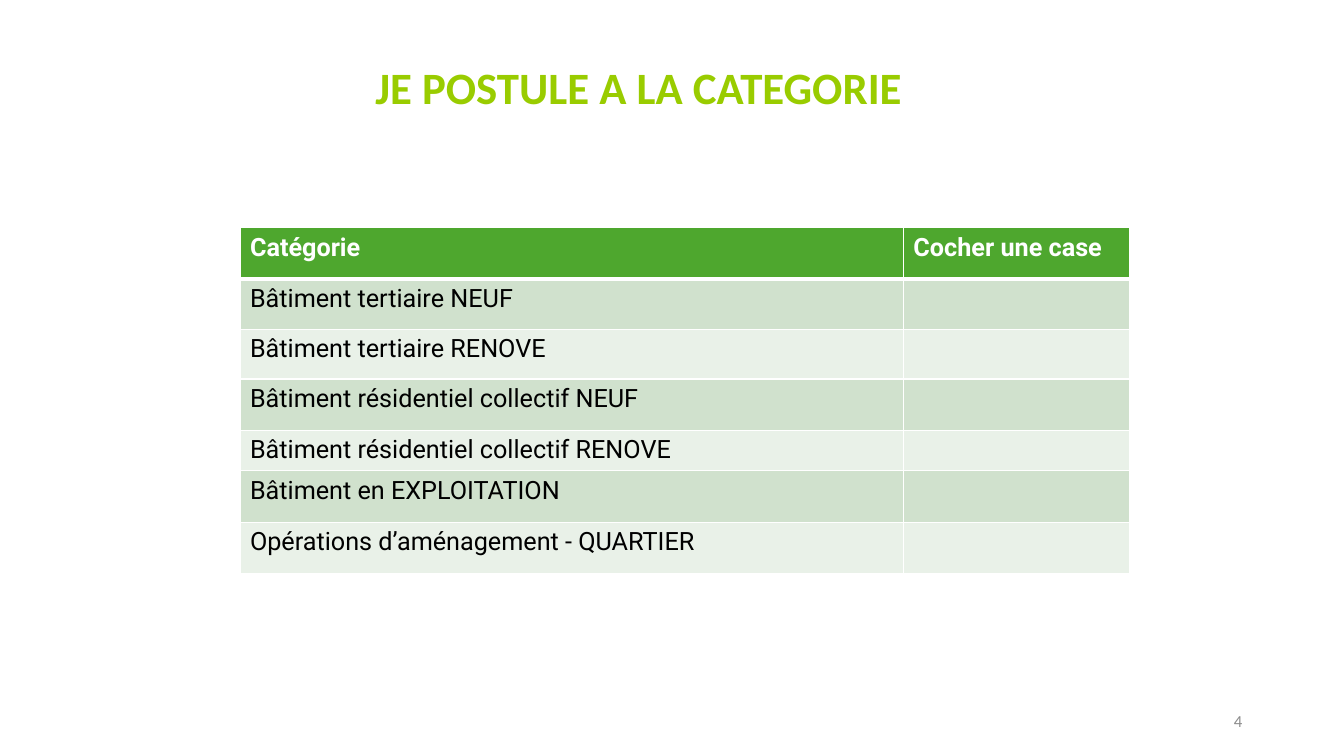
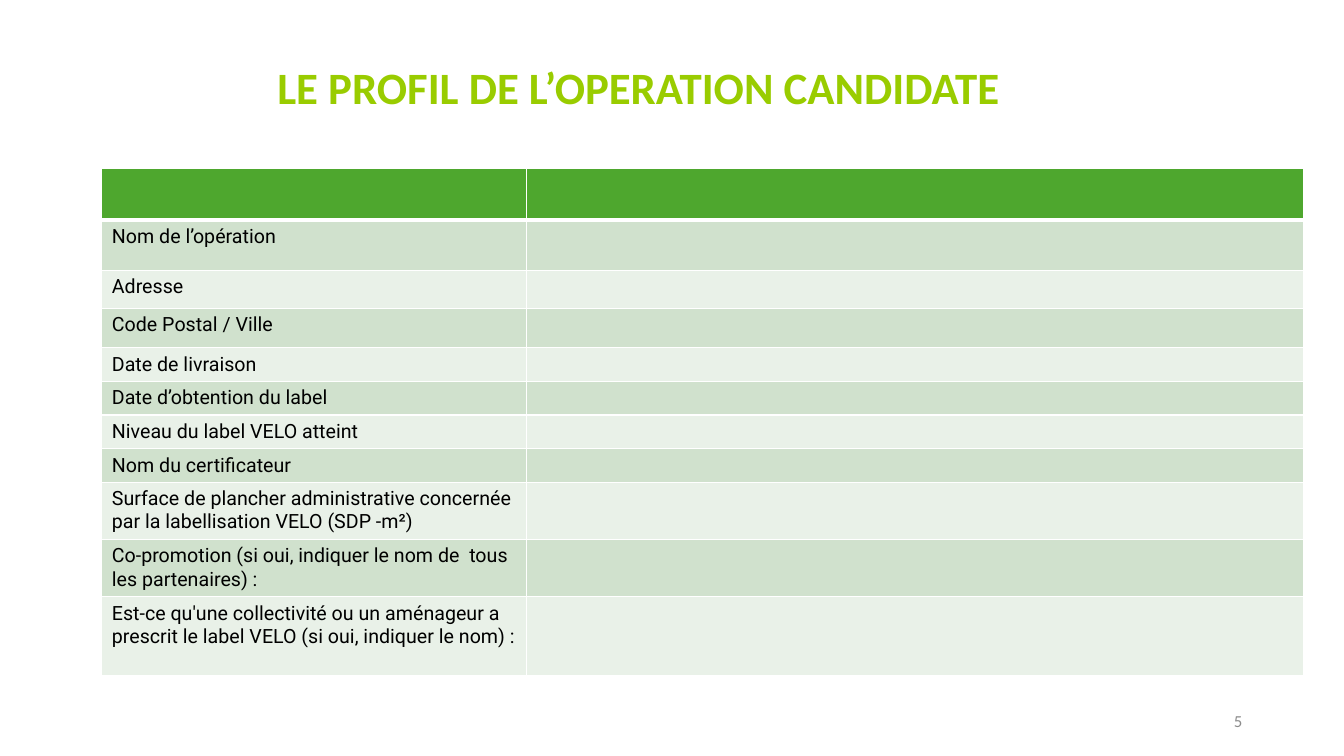
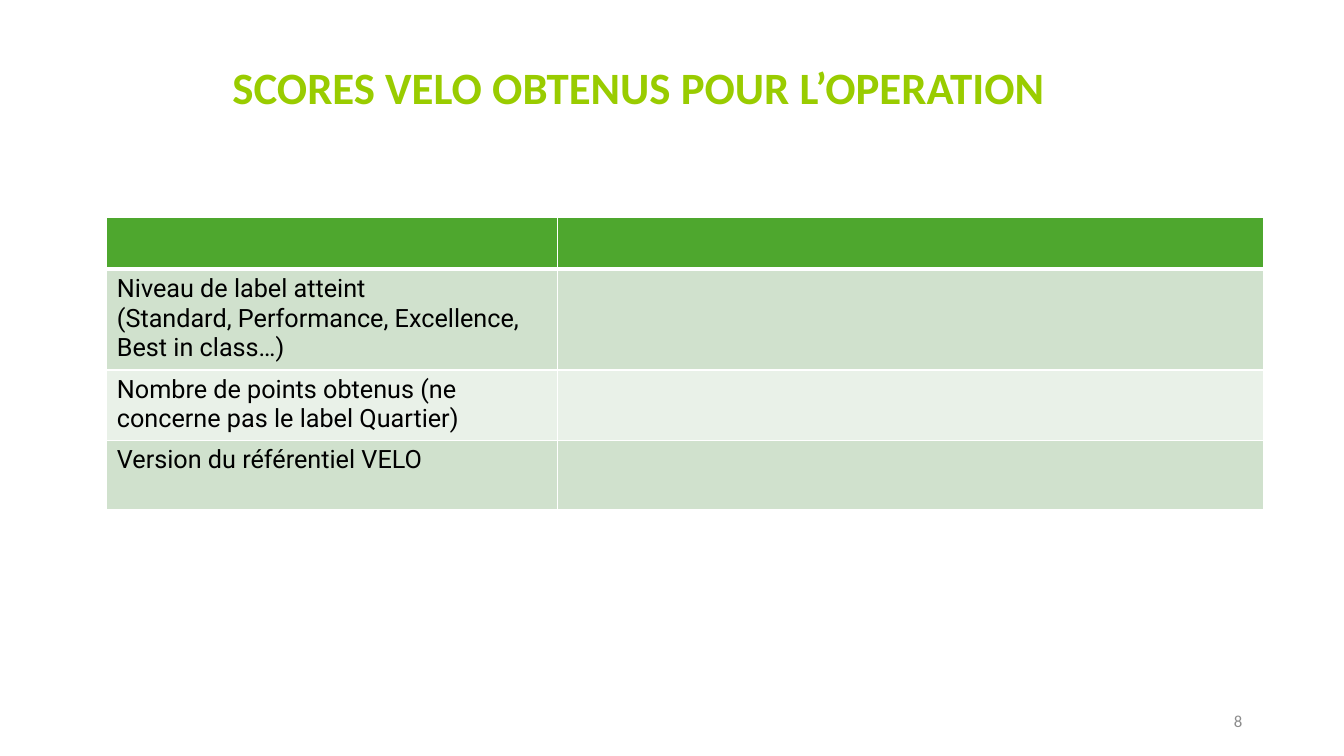
"""Build three application form slides, each with a title, a banded table and a page number."""
import pptx
import pptx.dml.color
import pptx.enum.text
import pptx.oxml
import pptx.oxml.ns
import pptx.util

Inches = pptx.util.Inches
Pt = pptx.util.Pt
RGBColor = pptx.dml.color.RGBColor
PP_ALIGN = pptx.enum.text.PP_ALIGN
MSO_ANCHOR = pptx.enum.text.MSO_ANCHOR

LIME = RGBColor(0x99, 0xCC, 0x00)
GREEN = RGBColor(0x4E, 0xA7, 0x2E)
BAND_DARK = RGBColor(0xD0, 0xE1, 0xCD)
BAND_LIGHT = RGBColor(0xE9, 0xF1, 0xE8)
GRAY = RGBColor(0x8C, 0x8C, 0x8C)
BLACK = RGBColor(0x00, 0x00, 0x00)
WHITE = RGBColor(0xFF, 0xFF, 0xFF)
TITLE_FONT = "Calibri"
TABLE_FONT = "Roboto"

PAGES = [
    {
        "number": "4",
        "title": "JE POSTULE A LA CATEGORIE",
        "left": 2.38, "top": 2.26, "size": 18,
        "columns": [6.58, 2.24],
        "header": ["Catégorie", "Cocher une case"],
        "header_height": 0.51,
        "rows": [
            ("Bâtiment tertiaire NEUF", 0.5),
            ("Bâtiment tertiaire RENOVE", 0.49),
            ("Bâtiment résidentiel collectif NEUF", 0.51),
            ("Bâtiment résidentiel collectif RENOVE", 0.4),
            ("Bâtiment en EXPLOITATION", 0.51),
            ("Opérations d’aménagement - QUARTIER", 0.51),
        ],
    },
    {
        "number": "5",
        "title": "LE PROFIL DE L’OPERATION CANDIDATE",
        "left": 1.01, "top": 1.67, "size": 14,
        "columns": [4.21, 7.71],
        "header": ["", ""],
        "header_height": 0.51,
        "rows": [
            ("Nom de l’opération", 0.5),
            ("Adresse", 0.38),
            ("Code Postal / Ville", 0.39),
            ("Date de livraison", 0.33),
            ("Date d’obtention du label", 0.33),
            ("Niveau du label VELO atteint", 0.33),
            ("Nom du certificateur", 0.33),
            ("Surface de plancher administrative concernée par la labellisation VELO (SDP -m²)", 0.55),
            ("Co-promotion (si oui, indiquer le nom de  tous les partenaires) :", 0.55),
            ("Est-ce qu'une collectivité ou un aménageur a prescrit le label VELO "
             "(si oui, indiquer le nom) :", 0.78),
        ],
    },
    {
        "number": "8",
        "title": "SCORES VELO OBTENUS POUR L’OPERATION",
        "left": 1.06, "top": 2.16, "size": 18,
        "columns": [4.47, 7],
        "header": ["", ""],
        "header_height": 0.51,
        "rows": [
            ("Niveau de label atteint\n(Standard, Performance, Excellence, Best in class…)", 0.97),
            ("Nombre de points obtenus (ne concerne pas le label Quartier)", 0.68),
            ("Version du référentiel VELO", 0.69),
        ],
    },
]


def add_text(paragraph, text, font_name, size, color, bold=False):
    run = paragraph.add_run()
    run.text = text
    run.font.name = font_name
    run.font.size = Pt(size)
    run.font.color.rgb = color
    run.font.bold = bold


def add_borders(cell, widths):
    properties = cell._tc.get_or_add_tcPr()
    for side, width in widths.items():
        properties.append(pptx.oxml.parse_xml(
            f'<a:ln{side} {pptx.oxml.ns.nsdecls("a")} w="{Pt(width)}">'
            f'<a:solidFill><a:srgbClr val="{WHITE}"/></a:solidFill></a:ln{side}>'))


presentation = pptx.Presentation()
presentation.slide_width = Inches(13.33)
presentation.slide_height = Inches(7.5)

for page in PAGES:
    slide = presentation.slides.add_slide(presentation.slide_layouts[6])

    number_box = slide.shapes.add_textbox(Inches(9.42), Inches(6.95), Inches(3), Inches(0.4))
    number_box.text_frame.word_wrap = True
    number_box.text_frame.vertical_anchor = MSO_ANCHOR.MIDDLE
    paragraph = number_box.text_frame.paragraphs[0]
    paragraph.alignment = PP_ALIGN.RIGHT
    add_text(paragraph, page["number"], TITLE_FONT, 12, GRAY)

    title_box = slide.shapes.add_textbox(Inches(0.83), Inches(0.6), Inches(11.01), Inches(0.83))
    title_box.text_frame.word_wrap = True
    paragraph = title_box.text_frame.paragraphs[0]
    paragraph.alignment = PP_ALIGN.CENTER
    paragraph.line_spacing = 0.9
    add_text(paragraph, page["title"], TITLE_FONT, 32, LIME, bold=True)

    heights = [page["header_height"]] + [height for label, height in page["rows"]]
    contents = [page["header"]] + [[label, ""] for label, height in page["rows"]]
    table = slide.shapes.add_table(
        len(heights), len(page["columns"]), Inches(page["left"]), Inches(page["top"]),
        Inches(sum(page["columns"])), Inches(sum(heights))).table
    for column, width in zip(table.columns, page["columns"]):
        column.width = Inches(width)
    for row_index, (height, texts) in enumerate(zip(heights, contents)):
        table.rows[row_index].height = Inches(height)
        is_header = row_index == 0
        fill_color = GREEN if is_header else BAND_DARK if row_index % 2 else BAND_LIGHT
        for column_index, text in enumerate(texts):
            cell = table.cell(row_index, column_index)
            add_borders(cell, {"L": 1, "R": 1, "T": 3 if row_index == 1 else 1,
                               "B": 3 if is_header else 1})
            cell.fill.solid()
            cell.fill.fore_color.rgb = fill_color
            if not text:
                cell.text_frame.paragraphs[0]._p.append(pptx.oxml.parse_xml(
                    f'<a:endParaRPr {pptx.oxml.ns.nsdecls("a")} sz="{page["size"] * 100}"/>'))
                continue
            for line_index, line in enumerate(text.split("\n")):
                frame = cell.text_frame
                paragraph = frame.add_paragraph() if line_index else frame.paragraphs[0]
                add_text(paragraph, line, TABLE_FONT, page["size"],
                         WHITE if is_header else BLACK, bold=is_header)

presentation.save("out.pptx")
